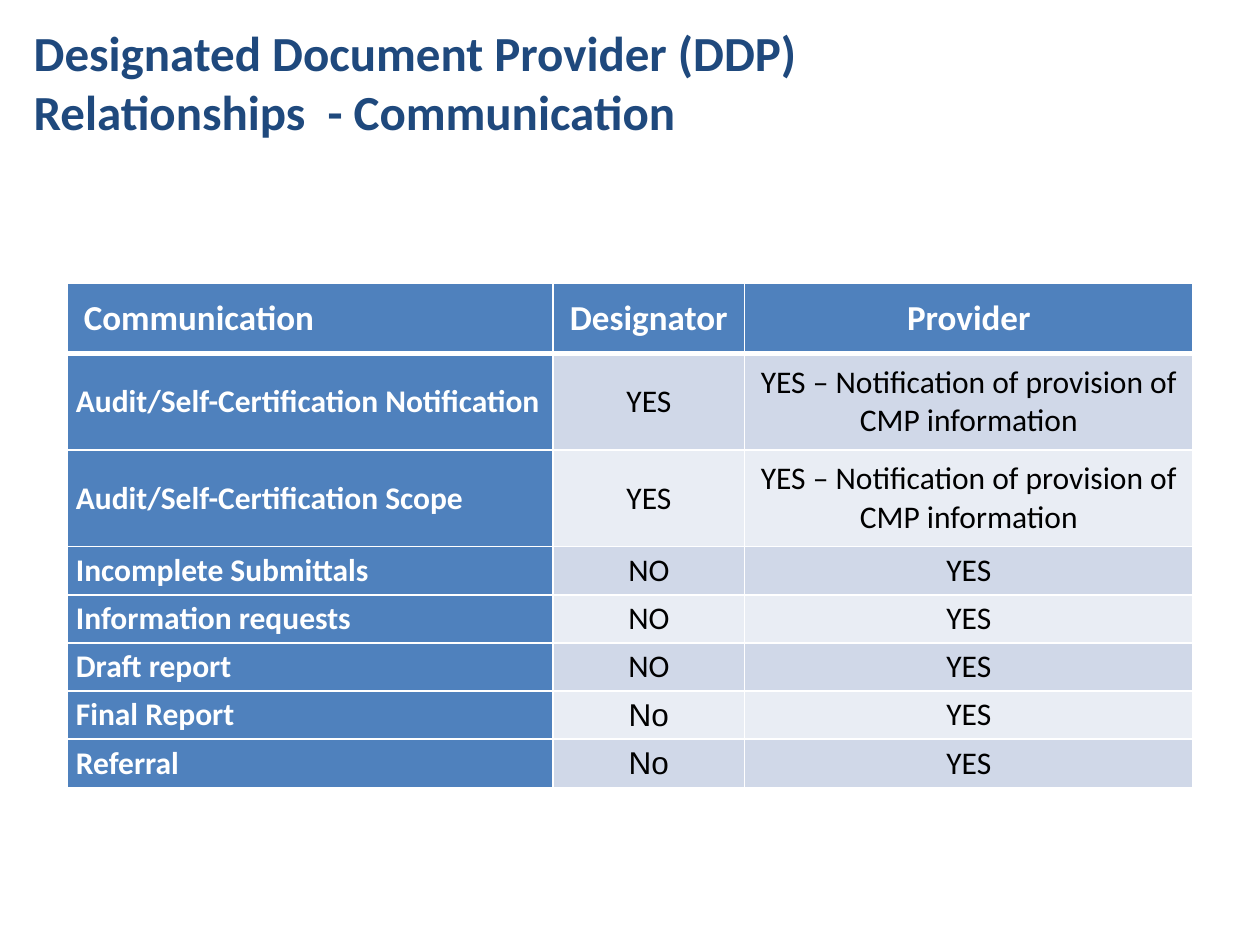
from dataclasses import dataclass

from lxml.etree import SubElement
from pptx import Presentation
from pptx.dml.color import RGBColor
from pptx.enum.text import MSO_ANCHOR, PP_ALIGN
from pptx.oxml.ns import qn
from pptx.util import Cm, Pt


@dataclass(frozen=True)
class Theme:
    heading: str = "1F497D"
    accent: str = "4F81BD"
    light: str = "FFFFFF"
    dark: str = "000000"
    bands: tuple = ("D0D8E8", "E9EDF4")
    font: str = "Calibri"
    alternate_font: str = "Arial"
    title_size: int = 28
    header_size: int = 20
    body_size: int = 18
    border: int = 1
    header_border: int = 3


THEME = Theme()

TITLE = "Designated Document Provider (DDP) Relationships  - Communication"
HEADERS = (" Communication", "Designator", "Provider")
NOTIFICATION = "YES – Notification of provision of CMP information"
ROWS = (
    ("Audit/Self-Certification Notification", "YES", NOTIFICATION),
    ("Audit/Self-Certification Scope", "YES", NOTIFICATION),
    ("Incomplete Submittals", "NO", "YES"),
    ("Information requests", "NO", "YES"),
    ("Draft report", "NO", "YES"),
    ("Final Report", "No", "YES"),
    ("Referral", "No", "YES"),
)
COLUMN_SHARES = (9.8, 3.86, 9.04)
ROW_SHARES = (1.4, 1.95, 1.95) + (0.97,) * 5


def add_run(paragraph, text, size, color, bold=False, font=THEME.font):
    run = paragraph.add_run()
    run.text = text
    run.font.name = font
    run.font.size = Pt(size)
    run.font.bold = bold
    run.font.color.rgb = RGBColor.from_string(color)


def set_borders(cell, bottom):
    properties = cell._tc.get_or_add_tcPr()
    for side in ("L", "R", "T", "B"):
        width = bottom if side == "B" else THEME.border
        line = SubElement(properties, qn(f"a:ln{side}"), w=str(Pt(width)))
        fill = SubElement(line, qn("a:solidFill"))
        SubElement(fill, qn("a:srgbClr"), val=THEME.light)


def style_cell(cell, fill, bottom=THEME.border):
    set_borders(cell, bottom)
    cell.fill.solid()
    cell.fill.fore_color.rgb = RGBColor.from_string(fill)
    cell.vertical_anchor = MSO_ANCHOR.MIDDLE
    cell.margin_left = cell.margin_right = Cm(0.18)
    cell.margin_top = cell.margin_bottom = 0


def add_title(slide, left, top, width, height):
    box = slide.shapes.add_textbox(left, top, width, height)
    frame = box.text_frame
    frame.word_wrap = True
    frame.vertical_anchor = MSO_ANCHOR.MIDDLE
    add_run(frame.paragraphs[0], TITLE, THEME.title_size, THEME.heading, bold=True)


def add_communication_table(slide, left, top, width, height):
    table = slide.shapes.add_table(
        len(ROWS) + 1, len(HEADERS), left, top, width, height
    ).table
    for column, share in zip(table.columns, COLUMN_SHARES):
        column.width = int(width * share / sum(COLUMN_SHARES))
    for row, share in zip(table.rows, ROW_SHARES):
        row.height = int(height * share / sum(ROW_SHARES))

    for row_index, texts in enumerate((HEADERS, *ROWS)):
        for column_index, text in enumerate(texts):
            cell = table.cell(row_index, column_index)
            paragraph = cell.text_frame.paragraphs[0]
            is_label = column_index == 0
            paragraph.alignment = PP_ALIGN.LEFT if is_label else PP_ALIGN.CENTER

            # Header row
            if row_index == 0:
                style_cell(cell, THEME.accent, THEME.header_border)
                paragraph.space_after = Pt(10)
                add_run(paragraph, text, THEME.header_size, THEME.light, bold=True)
            # Row labels
            elif is_label:
                style_cell(cell, THEME.accent)
                add_run(paragraph, text, THEME.body_size, THEME.light, bold=True)
            # Banded answers
            else:
                style_cell(cell, THEME.bands[(row_index - 1) % 2])
                font = THEME.alternate_font if text == "No" else THEME.font
                add_run(paragraph, text, THEME.body_size, THEME.dark, font=font)


def main():
    presentation = Presentation()
    presentation.slide_width = Cm(25.4)
    presentation.slide_height = Cm(19.05)
    slide = presentation.slides.add_slide(presentation.slide_layouts[6])
    add_title(slide, Cm(0.43), Cm(0.69), Cm(18.62), Cm(1.9))
    add_communication_table(slide, Cm(1.35), Cm(5.72), Cm(22.7), Cm(10.15))
    presentation.save("out.pptx")


if __name__ == "__main__":
    main()
